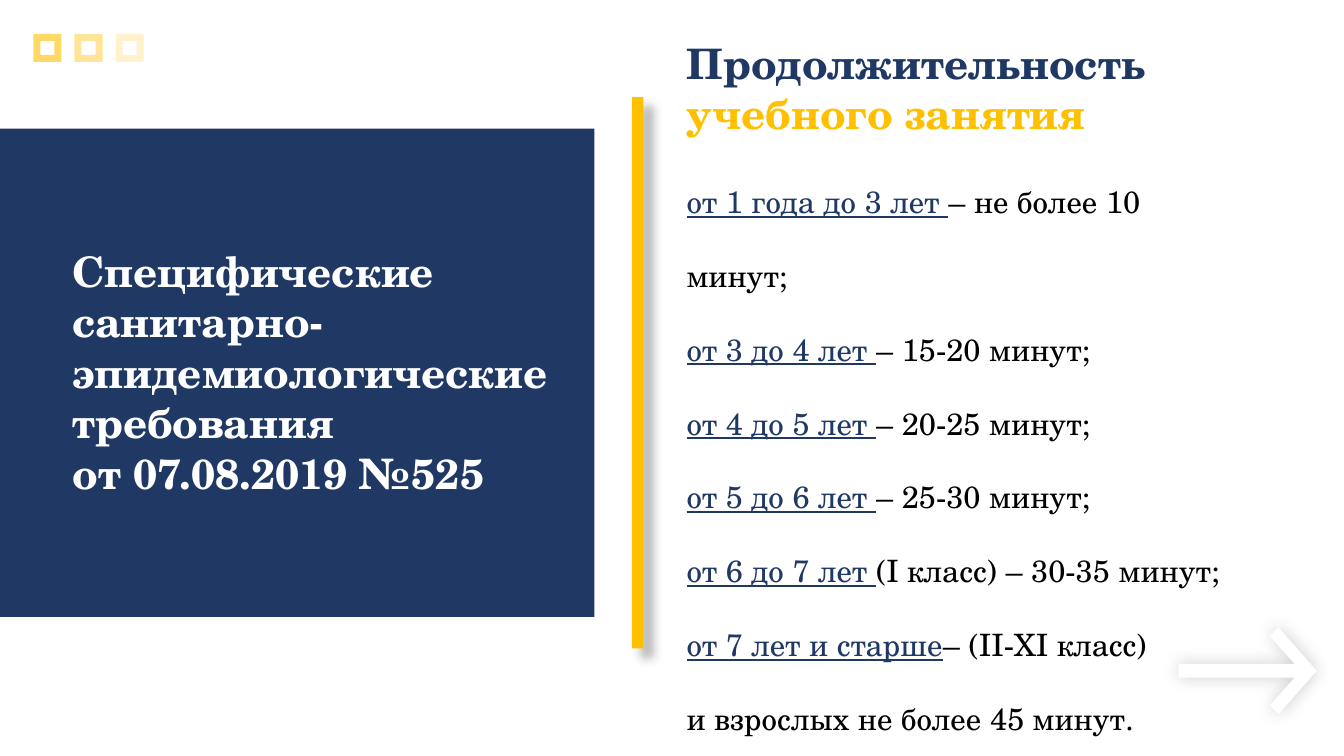
from dataclasses import dataclass

from lxml import etree
from pptx import Presentation
from pptx import util as u
from pptx.dml.color import RGBColor
from pptx.enum import shapes as es, text as et
from pptx.oxml import ns

FONT = "TeX Gyre Schola"
NAVY, GOLD, WHITE, BLACK = "203864", "FFC000", "FFFFFF", "000000"
HEAD = {"size": u.Pt(60), "bold": True, "underline": False}
AGE = {"size": u.Pt(44), "bold": False, "underline": True}
TIME = {**AGE, "underline": False}


@dataclass
class Shade:
    alpha: int
    blur: float
    dist: float
    angle: int


@dataclass
class Bar:
    left: float
    top: float
    width: float
    height: float
    color: str
    shade: Shade | None = None


@dataclass
class Limit:
    age: str
    time: str
    gap: float = 0


BARS = [
    Bar(902.5, 138.6, 16.5, 787.7, GOLD, Shade(30, 15, 18, 45)),
    Bar(0, 183.6, 848.9, 697.7, NAVY),
]
TITLE = ["Специфические", "санитарно-", "эпидемиологические",
         "требования", "от 07.08.2019 №525"]
TOPIC = [("Продолжительность", NAVY), ("учебного занятия", GOLD)]
LIMITS = [
    Limit("от 1 года до 3 лет ", "– не более 10 минут;", 10.8),
    Limit("от 3 до 4 лет ", "– 15-20 минут;"),
    Limit("от 4 до 5 лет ", "– 20-25 минут;"),
    Limit("от 5 до 6 лет ", "– 25-30 минут;"),
    Limit("от 6 до 7 лет ", "(I класс) – 30-35 минут;"),
    Limit("от 7 лет и старше", "– (II-XI класс)"),
    Limit("", "и взрослых не более 45 минут."),
]


def rgb(color: str) -> RGBColor:
    return RGBColor.from_string(color)


def node(parent, tag: str, **attrs):
    return etree.SubElement(parent, ns.qn(tag),
                            {k: str(v) for k, v in attrs.items()})


def fade(clr, alpha: int) -> None:
    node(clr, "a:alpha", val=alpha * 1000)


def paint(shape, color: str, shade: Shade | None = None) -> None:
    """Flat fill without outline, with an optional soft shadow."""
    shape.fill.solid()
    shape.fill.fore_color.rgb = rgb(color)
    shape.line.fill.background()
    shape.shadow.inherit = False
    if shade:
        glow = node(shape.element.spPr.find(ns.qn("a:effectLst")),
                    "a:outerShdw", blurRad=u.Pt(shade.blur),
                    dist=u.Pt(shade.dist), dir=shade.angle * 60000,
                    algn="ctr", rotWithShape=0)
        fade(node(glow, "a:srgbClr", val=BLACK), shade.alpha)


def rect(pool, left: float, top: float, width: float, height: float):
    return pool.add_shape(es.MSO_SHAPE.RECTANGLE, u.Pt(left), u.Pt(top),
                          u.Pt(width), u.Pt(height))


def frame(group, left: float, alpha: int) -> None:
    """Small hollow square with a see-through outline."""
    box = rect(group.shapes, left, 53.3, 30.2, 30.2)
    box.shadow.inherit = False
    box.fill.background()
    box.line.width = u.Pt(10)
    box.line.color.rgb = rgb(GOLD)
    edge = box.element.spPr.find(ns.qn("a:ln"))
    fade(edge.find(".//" + ns.qn("a:srgbClr")), alpha)
    node(edge, "a:miter", lim=800000)


def arrow(pool) -> None:
    """Block arrow, mirrored about its middle line."""
    tip, mid = 1880.6, 958.3
    half = [(1825.9, 62), (1813.7, 49.3), (1849, 9.7), (1683.4, 9.7)]
    low = [(x, mid + dy) for x, dy in half]
    high = [(x, mid - dy) for x, dy in reversed(half)]
    pen = pool.build_freeform(u.Pt(tip), u.Pt(mid))
    pen.add_line_segments([(u.Pt(x), u.Pt(y)) for x, y in low + high])
    paint(pen.convert_to_shape(), WHITE, Shade(20, 25, 0, 0))


def write(para, text: str, color: str, style: dict) -> None:
    run = para.add_run()
    run.text = text
    for key, value in {"name": FONT, **style}.items():
        setattr(run.font, key, value)
    run.font.color.rgb = rgb(color)


def setup(box, left: float, top: float, width: float, height: float):
    for key, value in {"left": left, "top": top, "width": width,
                       "height": height}.items():
        setattr(box, key, u.Pt(value))
    body = box.text_frame
    for key, value in {"word_wrap": True,
                       "vertical_anchor": et.MSO_ANCHOR.TOP,
                       "auto_size": et.MSO_AUTO_SIZE.SHAPE_TO_FIT_TEXT}.items():
        setattr(body, key, value)
    return body


def lines(body, count: int) -> list:
    paras = [body.paragraphs[0]]
    paras += [body.add_paragraph() for _ in range(count - 1)]
    for para in paras:
        para.alignment = et.PP_ALIGN.LEFT
    return paras


def main() -> None:
    deck = Presentation()
    deck.slide_width, deck.slide_height = u.Pt(1919.5), u.Pt(1080)
    slide = deck.slides.add_slide(deck.slide_layouts[5])
    pool = slide.shapes

    # Corner squares
    group = pool.add_group_shape()
    for i, alpha in enumerate((60, 40, 20)):
        frame(group, 52.6 + 58.7 * i, alpha)

    # Divider, arrow and title panel
    for bar in BARS:
        paint(rect(pool, bar.left, bar.top, bar.width, bar.height),
              bar.color, bar.shade)
    arrow(pool)

    # Title, brought in front of its panel
    title = pool.title
    pool.element.append(title.element)
    body = setup(title, 95.8, 347, 826.6, 370.8)
    for para, text in zip(lines(body, len(TITLE)), TITLE):
        write(para, text, WHITE, HEAD)

    # Lesson lengths by age
    box = pool.add_textbox(0, 0, 0, 0)
    body = setup(box, 973.4, 49.7, 810, 963.4)
    paras = lines(body, len(TOPIC) + len(LIMITS))
    for para, (text, color) in zip(paras, TOPIC):
        write(para, text, color, HEAD)
    for para, limit in zip(paras[len(TOPIC):], LIMITS):
        para.line_spacing = 2.0
        if limit.gap:
            para.space_before = u.Pt(limit.gap)
        if limit.age:
            write(para, limit.age, NAVY, AGE)
        write(para, limit.time, BLACK, TIME)

    deck.save("out.pptx")


if __name__ == "__main__":
    main()
